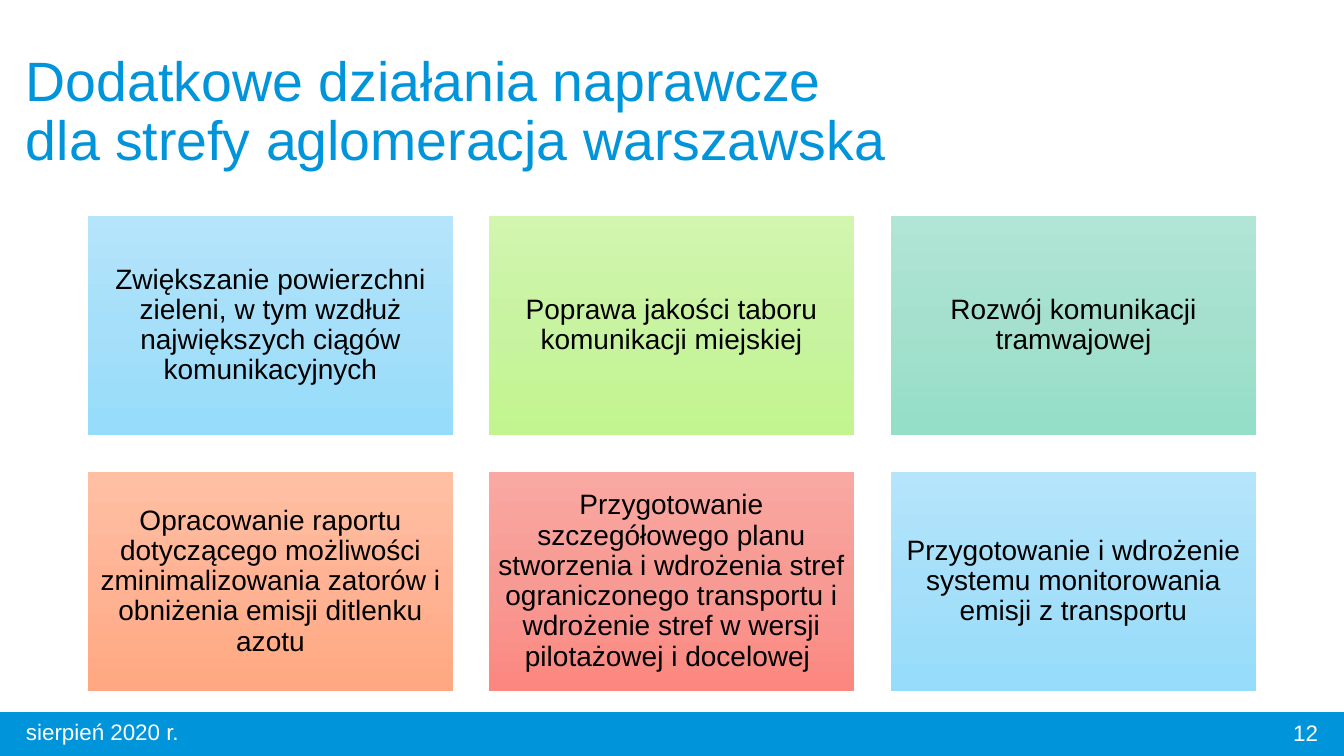
import copy

import pptx
import pptx.dml.color
import pptx.enum.shapes
import pptx.enum.text
import pptx.oxml.ns
import pptx.util

RGBColor = pptx.dml.color.RGBColor
Align = pptx.enum.text.PP_ALIGN

BRAND_BLUE = RGBColor(0x00, 0x94, 0xDA)
BLACK = RGBColor(0x00, 0x00, 0x00)
WHITE = RGBColor(0xFF, 0xFF, 0xFF)
SKY = (RGBColor(0xB5, 0xE5, 0xFB), RGBColor(0xA6, 0xDF, 0xF9), RGBColor(0x95, 0xDD, 0xFB))
LIME = (RGBColor(0xD2, 0xF5, 0xAF), RGBColor(0xC8, 0xF3, 0xA0), RGBColor(0xC2, 0xF5, 0x8F))
MINT = (RGBColor(0xB1, 0xE5, 0xD5), RGBColor(0xA4, 0xE0, 0xCD), RGBColor(0x93, 0xDF, 0xC7))
ORANGE = (RGBColor(0xFF, 0xBF, 0xA3), RGBColor(0xFF, 0xB3, 0x94), RGBColor(0xFF, 0xA8, 0x81))
CORAL = (RGBColor(0xFA, 0xA8, 0xA2), RGBColor(0xF8, 0x9A, 0x94), RGBColor(0xFB, 0x87, 0x7F))

ACTIONS = [
    ("Zwiększanie powierzchni zieleni, w tym wzdłuż największych ciągów komunikacyjnych", SKY),
    ("Poprawa jakości taboru komunikacji miejskiej", LIME),
    ("Rozwój komunikacji tramwajowej", MINT),
    ("Opracowanie raportu dotyczącego możliwości zminimalizowania zatorów i obniżenia "
     "emisji ditlenku azotu", ORANGE),
    ("Przygotowanie szczegółowego planu stworzenia i wdrożenia stref ograniczonego "
     "transportu i wdrożenie stref w wersji pilotażowej i docelowej ", CORAL),
    ("Przygotowanie i wdrożenie systemu monitorowania emisji z transportu", SKY),
]


class SlideBuilder:
    """Holds the style and the current slide and draws each kind of element."""

    font = "Arial"
    scale = 914400 / 100.8

    def __init__(self, page):
        self.page = page

    def emu(self, *lengths):
        return [pptx.util.Emu(round(length * self.scale)) for length in lengths]

    def set_text(self, shape, lines, size, color, align, spacing, inset):
        frame = shape.text_frame
        frame.word_wrap = True
        frame.vertical_anchor = pptx.enum.text.MSO_ANCHOR.MIDDLE
        frame.margin_left, frame.margin_right = self.emu(inset[0], inset[0])
        frame.margin_top, frame.margin_bottom = self.emu(inset[1], inset[1])
        para = frame.paragraphs[0]
        para.alignment = align
        para.line_spacing = spacing
        for index, line in enumerate(lines):
            if index:
                para.add_line_break()
            span = para.add_run()
            span.text = line
            span.font.name = self.font
            span.font.size = pptx.util.Pt(size)
            span.font.color.rgb = color

    def text(self, bounds, lines, size, color, align=Align.LEFT, spacing=1.0):
        box = self.page.shapes.add_textbox(*self.emu(*bounds))
        self.set_text(box, lines, size, color, align, spacing, (10, 5))

    def rectangle(self, bounds):
        shape = self.page.shapes.add_shape(
            pptx.enum.shapes.MSO_SHAPE.RECTANGLE, *self.emu(*bounds))
        shape.shadow.inherit = False
        return shape

    def bar(self, bounds, color):
        shape = self.rectangle(bounds)
        shape.fill.solid()
        shape.fill.fore_color.rgb = color
        shape.line.color.rgb = color
        shape.line.width = pptx.util.Pt(1)

    def tile(self, bounds, label, colors):
        shape = self.rectangle(bounds)
        shape.line.fill.background()
        shape.fill.gradient()
        shape.fill.gradient_angle = 270
        stops = next(shape.element.spPr.iter(pptx.oxml.ns.qn("a:gsLst")))
        stops.insert(1, copy.deepcopy(stops[0]))
        for index, (stop, color) in enumerate(zip(shape.fill.gradient_stops, colors)):
            stop.position = index / 2
            stop.color.rgb = color
        self.set_text(shape, [label], 20, BLACK, Align.CENTER, 0.9, (8, 8))


def main():
    deck = pptx.Presentation()
    page = deck.slides.add_slide(deck.slide_layouts[6])
    builder = SlideBuilder(page)
    page_width, page_height = 1344, 756
    deck.slide_width, deck.slide_height = builder.emu(page_width, page_height)

    builder.bar((0, 713, page_width, 43), BRAND_BLUE)
    builder.text((16, 40, 903, 146),
                 ["Dodatkowe działania naprawcze", "dla strefy aglomeracja warszawska"],
                 39.6, BRAND_BLUE, spacing=0.9)
    for index, (label, colors) in enumerate(ACTIONS):
        row, column = divmod(index, 3)
        builder.tile((88 + column * 803 // 2, 216 + row * 256, 365, 219), label, colors)
    builder.text((1026, 713, 302, 40), ["12"], 16, WHITE, Align.RIGHT)
    builder.text((16, 712, 403, 40), ["sierpień 2020 r."], 16, WHITE)

    deck.save("out.pptx")


if __name__ == "__main__":
    main()
